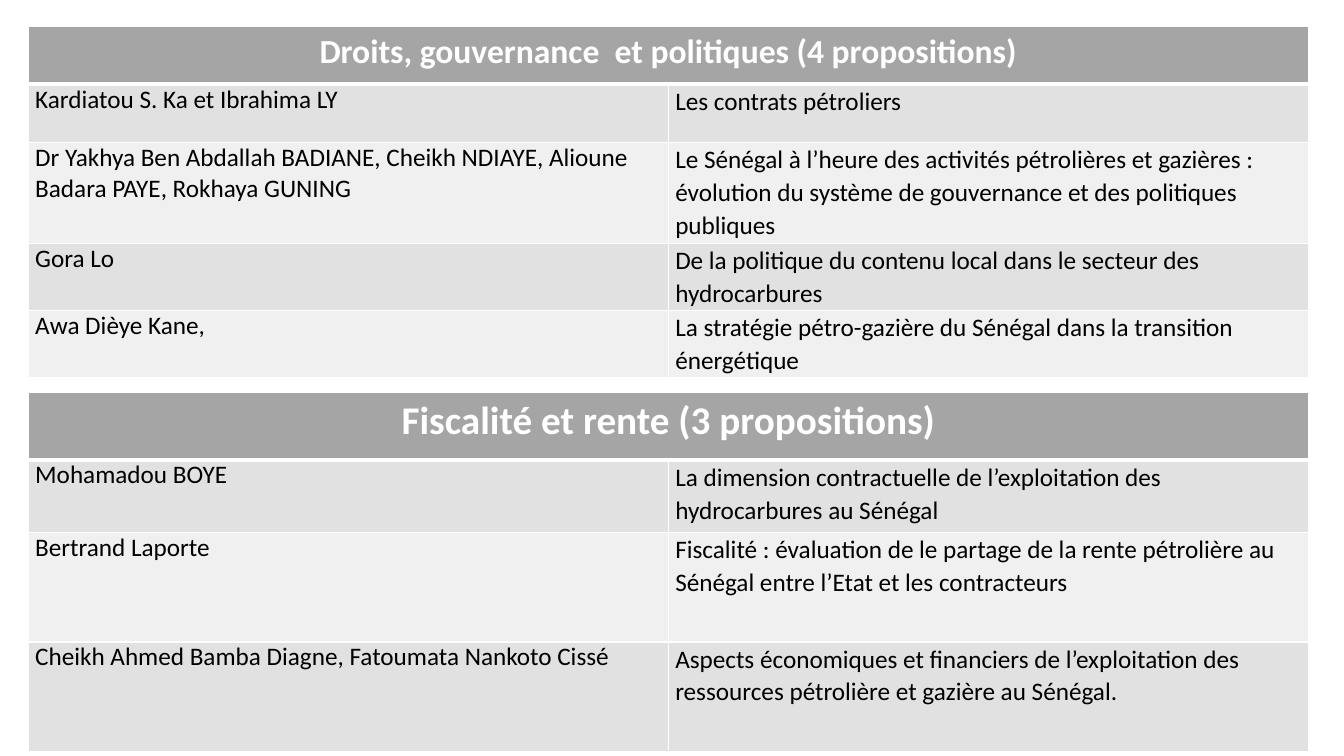
from lxml import etree
from pptx import Presentation
from pptx import util as u
from pptx.dml.color import RGBColor
from pptx.enum import text
from pptx.oxml import ns

WHITE = RGBColor(0xFF, 0xFF, 0xFF)
BLACK = RGBColor(0x00, 0x00, 0x00)
HEADER_GREY = RGBColor(0xA5, 0xA5, 0xA5)
BAND_GREYS = (RGBColor(0xE1, 0xE1, 0xE1), RGBColor(0xF0, 0xF0, 0xF0))

GOVERNANCE = [
    ("Kardiatou S. Ka et Ibrahima LY", "Les contrats pétroliers"),
    ("Dr Yakhya Ben Abdallah BADIANE, Cheikh NDIAYE, Alioune Badara PAYE, Rokhaya GUNING",
     "Le Sénégal à l’heure des activités pétrolières et gazières : évolution du système "
     "de gouvernance et des politiques publiques"),
    ("Gora Lo", "De la politique du contenu local dans le secteur des hydrocarbures"),
    ("Awa Dièye Kane,", "La stratégie pétro-gazière du Sénégal dans la transition énergétique"),
]
TAXATION = [
    ("Mohamadou BOYE",
     "La dimension contractuelle de l’exploitation des hydrocarbures au Sénégal"),
    ("Bertrand Laporte",
     "Fiscalité : évaluation de le partage de la rente pétrolière au Sénégal "
     "entre l’Etat et les contracteurs"),
    ("Cheikh Ahmed Bamba Diagne, Fatoumata Nankoto Cissé",
     "Aspects économiques et financiers de l’exploitation des ressources "
     "pétrolière et gazière au Sénégal."),
]


class ProposalSlide:
    font = "Calibri"
    body_size = 18
    left = 20.16
    column_width = 457.2
    thin, thick = 1, 3

    def __init__(self, slide):
        self.slide = slide

    def table(self, top, title, title_size, proposals, heights):
        frame = self.slide.shapes.add_table(
            len(heights), 2, u.Pt(self.left), u.Pt(top),
            u.Pt(2 * self.column_width), u.Pt(sum(heights)))
        table = frame.table
        for column in table.columns:
            column.width = u.Pt(self.column_width)
        for row, height in zip(table.rows, heights):
            row.height = u.Pt(height)

        # Header across both columns
        table.cell(0, 0).merge(table.cell(0, 1))
        for column in range(2):
            self.paint(table.cell(0, column), HEADER_GREY, bottom=self.thick)
        para = self.label(table.cell(0, 0), title, title_size, WHITE, bold=True)
        para.alignment = text.PP_ALIGN.CENTER

        # Authors on the left, subject on the right
        for index, (authors, subject) in enumerate(proposals):
            cells = table.cell(index + 1, 0), table.cell(index + 1, 1)
            for cell in cells:
                self.paint(cell, BAND_GREYS[index % 2],
                           top=self.thin if index else self.thick)
                cell.margin_left = cell.margin_right = u.Pt(5)
                cell.margin_top = cell.margin_bottom = u.Pt(0)
            self.label(cells[0], authors, self.body_size, BLACK).space_after = u.Pt(8)
            self.label(cells[1], subject, self.body_size, BLACK).line_spacing = 1.07

    def paint(self, cell, color, top=thin, bottom=thin):
        properties = cell._tc.get_or_add_tcPr()
        sides = {"lnL": self.thin, "lnR": self.thin, "lnT": top, "lnB": bottom}
        for side, width in sides.items():
            line = etree.SubElement(properties, ns.qn("a:" + side), w=str(u.Pt(width)))
            fill = etree.SubElement(line, ns.qn("a:solidFill"))
            etree.SubElement(fill, ns.qn("a:srgbClr"), val=str(WHITE))
        cell.fill.solid()
        cell.fill.fore_color.rgb = color

    def label(self, cell, words, size, color, bold=False):
        cell.text_frame.text = words
        para = cell.text_frame.paragraphs[0]
        for span in para.runs:
            span.font.name = self.font
            span.font.size = u.Pt(size)
            span.font.bold = bold
            span.font.color.rgb = color
        return para


def main():
    deck = Presentation()
    deck.slide_width, deck.slide_height = u.Pt(960), u.Pt(540)
    page = ProposalSlide(deck.slides.add_slide(deck.slide_layouts[6]))

    page.table(18.72, "Droits, gouvernance  et politiques (4 propositions)", 24,
               GOVERNANCE, [41.5, 41.5, 72, 48, 48])
    page.table(280.08, "Fiscalité et rente (3 propositions)", 28,
               TAXATION, [48.5, 52, 78, 78])

    deck.save("out.pptx")


if __name__ == "__main__":
    main()
